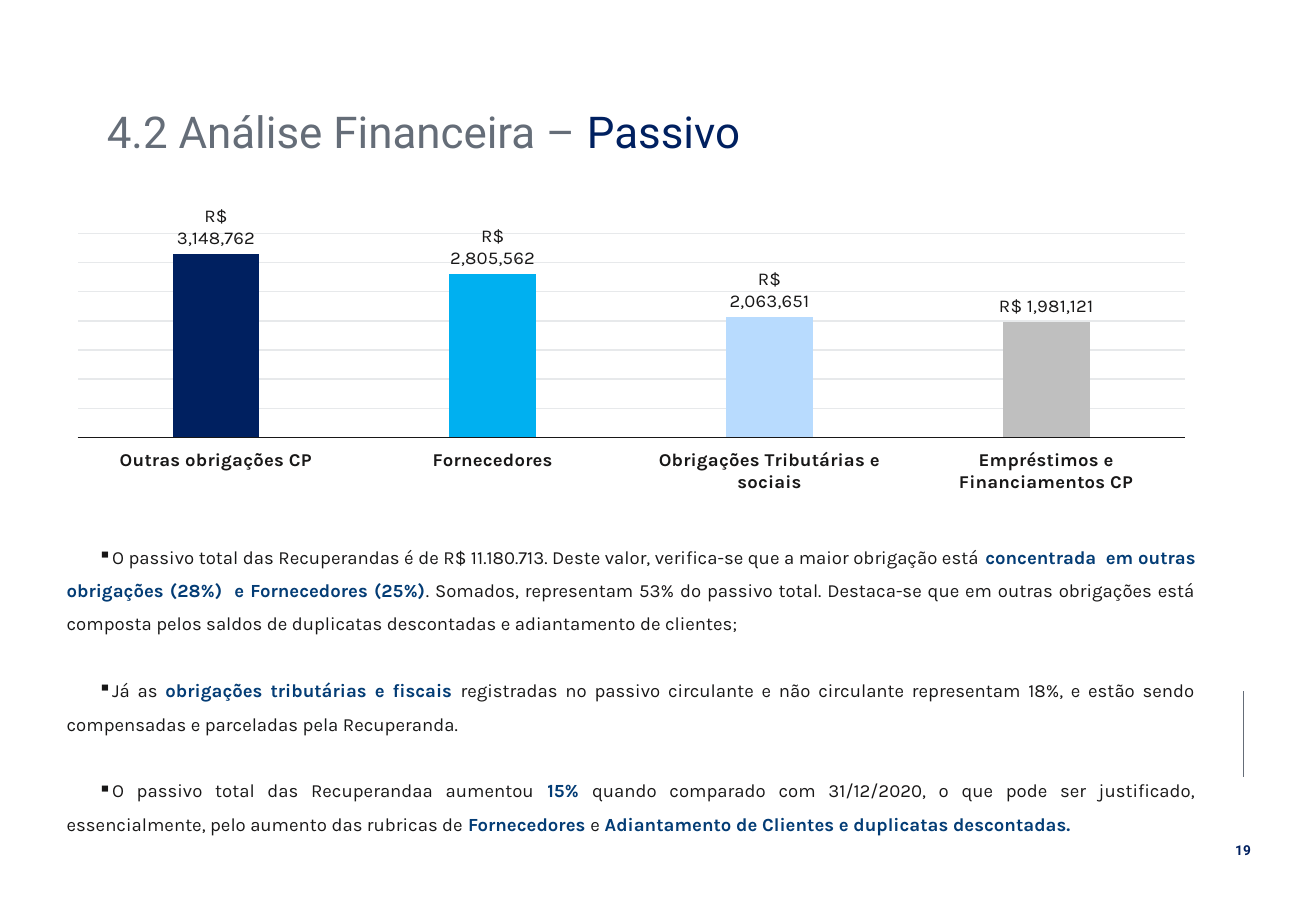
from dataclasses import dataclass

from lxml import etree
from pptx import Presentation
from pptx.chart.data import CategoryChartData
from pptx.dml.color import RGBColor
from pptx.enum.chart import XL_CHART_TYPE, XL_LABEL_POSITION, XL_TICK_LABEL_POSITION, XL_TICK_MARK
from pptx.enum.shapes import MSO_CONNECTOR
from pptx.enum.text import MSO_ANCHOR, PP_ALIGN
from pptx.oxml import parse_xml
from pptx.oxml.ns import nsdecls, qn
from pptx.util import Pt


@dataclass(frozen=True)
class Theme:
    navy: str = "002060"
    grey: str = "656D78"
    ink: str = "181717"
    accent: str = "033C75"
    grid: str = "E7E9EB"
    bars: tuple = ("002060", "00B0F0", "B8DBFE", "BFBFBF")
    heading_font: str = "Roboto"
    body_font: str = "Karla"
    title_size: float = 26
    body_size: float = 11
    number_size: float = 8.1


class SlideBuilder:
    def __init__(self, slide, theme):
        self.slide = slide
        self.theme = theme

    def style(self, font, name, size, color, bold=False):
        font.name = name
        font.size = Pt(size)
        font.bold = bold
        font.color.rgb = RGBColor.from_string(color)

    def text_box(self, left, top, width, height, wrap=True):
        frame = self.slide.shapes.add_textbox(Pt(left), Pt(top), Pt(width), Pt(height)).text_frame
        frame.word_wrap = wrap
        frame.vertical_anchor = MSO_ANCHOR.TOP
        return frame

    def add_run(self, paragraph, text, name, size, color, bold=False):
        run = paragraph.add_run()
        run.text = text
        self.style(run.font, name, size, color, bold)

    def title(self, section, topic, *box):
        theme = self.theme
        line = self.text_box(*box).paragraphs[0]
        line.line_spacing = 0.9
        for text, color in ((section, theme.grey), (topic, theme.navy)):
            self.add_run(line, text, theme.heading_font, theme.title_size, color)

    def page_number(self, number, *box):
        theme = self.theme
        line = self.text_box(*box, wrap=False).paragraphs[0]
        line.text = number
        line.alignment = PP_ALIGN.CENTER
        self.style(line.runs[0].font, theme.heading_font, theme.number_size, theme.navy, True)

    def bullets(self, items, indent, gap, *box):
        """Each item alternates plain and highlighted pieces, plain first."""
        theme = self.theme
        frame = self.text_box(*box)
        for index, pieces in enumerate(items):
            item = frame.add_paragraph() if index else frame.paragraphs[0]
            item.alignment = PP_ALIGN.JUSTIFY
            item.line_spacing = 1.5
            if index:
                item.space_before = Pt(gap)
            properties = item._p.get_or_add_pPr()
            properties.set("marL", "0")
            properties.set("indent", str(Pt(indent)))
            etree.SubElement(properties, qn("a:buChar")).set("char", "▪")
            for position, piece in enumerate(pieces):
                strong = position % 2 == 1
                self.add_run(item, piece, theme.body_font, theme.body_size,
                             theme.accent if strong else theme.ink, strong)

    def rule(self, x, top, bottom):
        line = self.slide.shapes.add_connector(
            MSO_CONNECTOR.STRAIGHT, Pt(x), Pt(top), Pt(x), Pt(bottom))
        line.line.color.rgb = RGBColor.from_string(self.theme.grey)
        line.line.width = Pt(0.5)
        etree.SubElement(line._element.spPr, qn("a:effectLst"))

    def column_chart(self, values, number_format, plot_area, *box):
        theme = self.theme
        data = CategoryChartData()
        data.categories = list(values)
        data.add_series("Passivo", list(values.values()))
        chart = self.slide.shapes.add_chart(
            XL_CHART_TYPE.COLUMN_CLUSTERED, *map(Pt, box), data).chart
        chart.has_legend = False
        chart.has_title = False
        self.style(chart.font, theme.body_font, theme.body_size, theme.ink)

        # Axes
        categories = chart.category_axis
        categories.major_tick_mark = XL_TICK_MARK.NONE
        categories.tick_label_position = XL_TICK_LABEL_POSITION.LOW
        self.style(categories.tick_labels.font, theme.body_font, theme.body_size, theme.ink, True)
        categories.format.line.color.rgb = RGBColor.from_string(theme.ink)
        categories.format.line.width = Pt(0.75)
        amounts = chart.value_axis
        amounts.visible = False
        amounts.minimum_scale, amounts.maximum_scale = 0, 3500000
        amounts.major_unit = 500000
        grid = amounts.major_gridlines.format.line
        grid.color.rgb = RGBColor.from_string(theme.grid)
        grid.width = Pt(0.75)

        # Columns and their labels
        plot = chart.plots[0]
        plot.gap_width, plot.overlap = 219, -27
        plot.vary_by_categories = False
        for index, color in enumerate(theme.bars):
            fill = plot.series[0].points[index].format.fill
            fill.solid()
            fill.fore_color.rgb = RGBColor.from_string(color)
        plot.has_data_labels = True
        labels = plot.data_labels
        labels.show_value = True
        labels.number_format = number_format
        labels.number_format_is_linked = False
        labels.position = XL_LABEL_POSITION.OUTSIDE_END
        self.style(labels.font, theme.body_font, theme.body_size, theme.ink)

        # Inner plot area as fractions of the chart
        sizes = "".join(f'<c:{key} val="{value}"/>' for key, value in zip("xywh", plot_area))
        layout = parse_xml(
            f'<c:layout {nsdecls("c")}><c:manualLayout><c:layoutTarget val="inner"/>'
            f'<c:xMode val="edge"/><c:yMode val="edge"/>{sizes}</c:manualLayout></c:layout>')
        area = chart._chartSpace.chart.plotArea
        for old in area.findall(qn("c:layout")):
            area.remove(old)
        area.insert(0, layout)


LIABILITIES = {
    "Outras obrigações CP": 3148762,
    "Fornecedores": 2805562,
    "Obrigações Tributárias e sociais": 2063651,
    "Empréstimos e Financiamentos CP": 1981121,
}

COMMENTS = [
    ("O passivo total das Recuperandas é de R$ 11.180.713. Deste valor, verifica-se que a maior "
     "obrigação está ",
     "concentrada  em outras obrigações (28%)  e Fornecedores (25%)",
     ". Somados, representam 53% do passivo total. Destaca-se que em outras obrigações está "
     "composta pelos saldos de duplicatas descontadas e adiantamento de clientes;"),
    ("Já as ",
     "obrigações tributárias e fiscais ",
     "registradas no passivo circulante e não circulante representam 18%, e estão sendo "
     "compensadas e parceladas pela Recuperanda."),
    ("O passivo total das Recuperandaa aumentou ",
     "15% ",
     "quando comparado com 31/12/2020, o que pode ser justificado, essencialmente, pelo aumento "
     "das rubricas de ",
     "Fornecedores ",
     "e",
     " Adiantamento de Clientes e duplicatas descontadas."),
]


def main():
    deck = Presentation()
    deck.slide_width, deck.slide_height = Pt(779.76), Pt(540)
    page = SlideBuilder(deck.slides.add_slide(deck.slide_layouts[6]), Theme())

    # Page margin
    page.rule(736.6, 409.7, 460.8)
    page.page_number("19", 724.3, 495.4, 24.5, 17.3)

    # Heading
    page.title("4.2 Análise Financeira – ", "Passivo", 56.2, 61.9, 589, 38.2)

    # Liabilities chart and comments share one column
    left, width = 32.4, 683.3
    page.column_chart(LIABILITIES, '"R$"\\ #,##0', (0.02, 0.09, 0.96, 0.73),
                      left, 121.7, width, 170.6)
    page.bullets(COMMENTS, 18.72, 19.8, left, 313.2, width, 187.2)

    deck.save("out.pptx")


if __name__ == "__main__":
    main()
